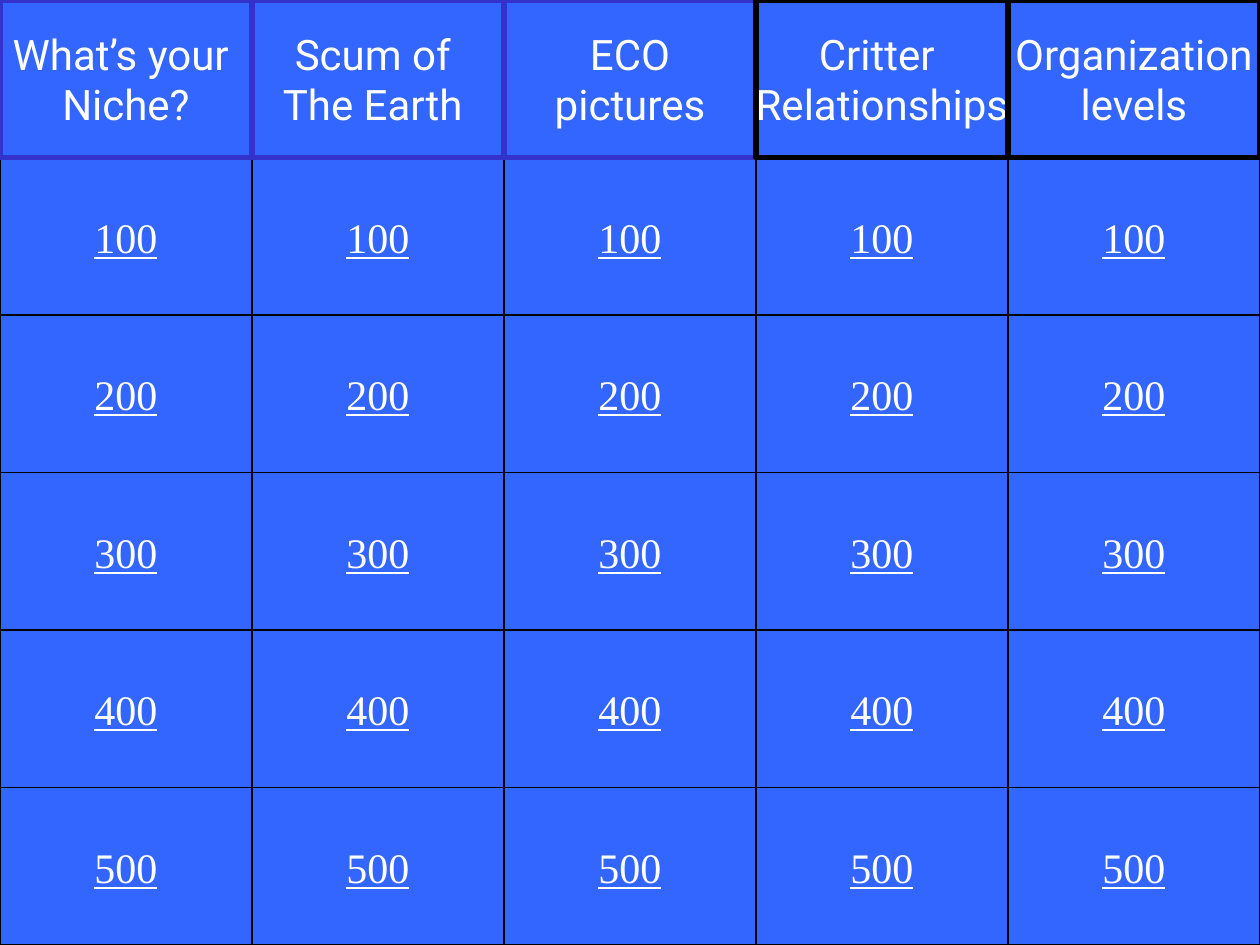
"""Build a quiz board: five category headers above a grid of point-value buttons."""
from dataclasses import dataclass

from pptx import Presentation
from pptx import util as u
from pptx.dml.color import RGBColor
from pptx.enum import shapes, text
from pptx.slide import Slide

COLORS = {"board": "3366FF", "violet": "3333CC", "black": "000000", "white": "FFFFFF"}
COLUMN_WIDTH, ROW_HEIGHT = 144, 90
POINT_VALUES = (100, 200, 300, 400, 500)


@dataclass(frozen=True)
class Category:
    lines: tuple[str, ...]
    border: str


@dataclass(frozen=True)
class CellStyle:
    preset: shapes.MSO_SHAPE
    border_width: float
    font: str
    underline: bool


CATEGORIES = (
    Category(("What’s your ", "Niche?"), "violet"),
    Category(("Scum of ", "The Earth "), "violet"),
    Category(("ECO", "pictures"), "violet"),
    Category(("Critter ", "Relationships"), "black"),
    Category(("Organization", "levels"), "black"),
)
HEADER = CellStyle(shapes.MSO_SHAPE.RECTANGLE, 3, "Roboto", False)
BUTTON = CellStyle(shapes.MSO_SHAPE.ACTION_BUTTON_CUSTOM, 0.75, "Times New Roman", True)


def color(name: str) -> RGBColor:
    return RGBColor.from_string(COLORS[name])


def draw_cell(slide: Slide, column: int, row: int, lines: tuple[str, ...],
              border: str, style: CellStyle) -> None:
    cell = slide.shapes.add_shape(
        style.preset, u.Pt(column * COLUMN_WIDTH), u.Pt(row * ROW_HEIGHT),
        u.Pt(COLUMN_WIDTH), u.Pt(ROW_HEIGHT))
    cell.shadow.inherit = False
    cell.fill.solid()
    cell.fill.fore_color.rgb = color("board")
    cell.line.color.rgb = color(border)
    cell.line.width = u.Pt(style.border_width)
    label = cell.text_frame
    label.word_wrap = False
    label.vertical_anchor = text.MSO_ANCHOR.MIDDLE
    label.text = "\n".join(lines)
    for paragraph in label.paragraphs:
        paragraph.alignment = text.PP_ALIGN.CENTER
        paragraph.font.name = style.font
        paragraph.font.size = u.Pt(24)
        paragraph.font.underline = style.underline
        paragraph.font.color.rgb = color("white")


def main() -> None:
    deck = Presentation()
    deck.slide_width = u.Pt(len(CATEGORIES) * COLUMN_WIDTH)
    deck.slide_height = u.Pt((len(POINT_VALUES) + 1) * ROW_HEIGHT)
    board = deck.slides.add_slide(deck.slide_layouts.get_by_name("Blank"))
    board.background.fill.solid()
    board.background.fill.fore_color.rgb = color("board")
    for column in range(len(CATEGORIES)):
        for row, points in enumerate(POINT_VALUES, start=1):
            draw_cell(board, column, row, (str(points),), "black", BUTTON)
    for column, category in enumerate(CATEGORIES):
        draw_cell(board, column, 0, category.lines, category.border, HEADER)
    deck.save("out.pptx")


if __name__ == "__main__":
    main()
